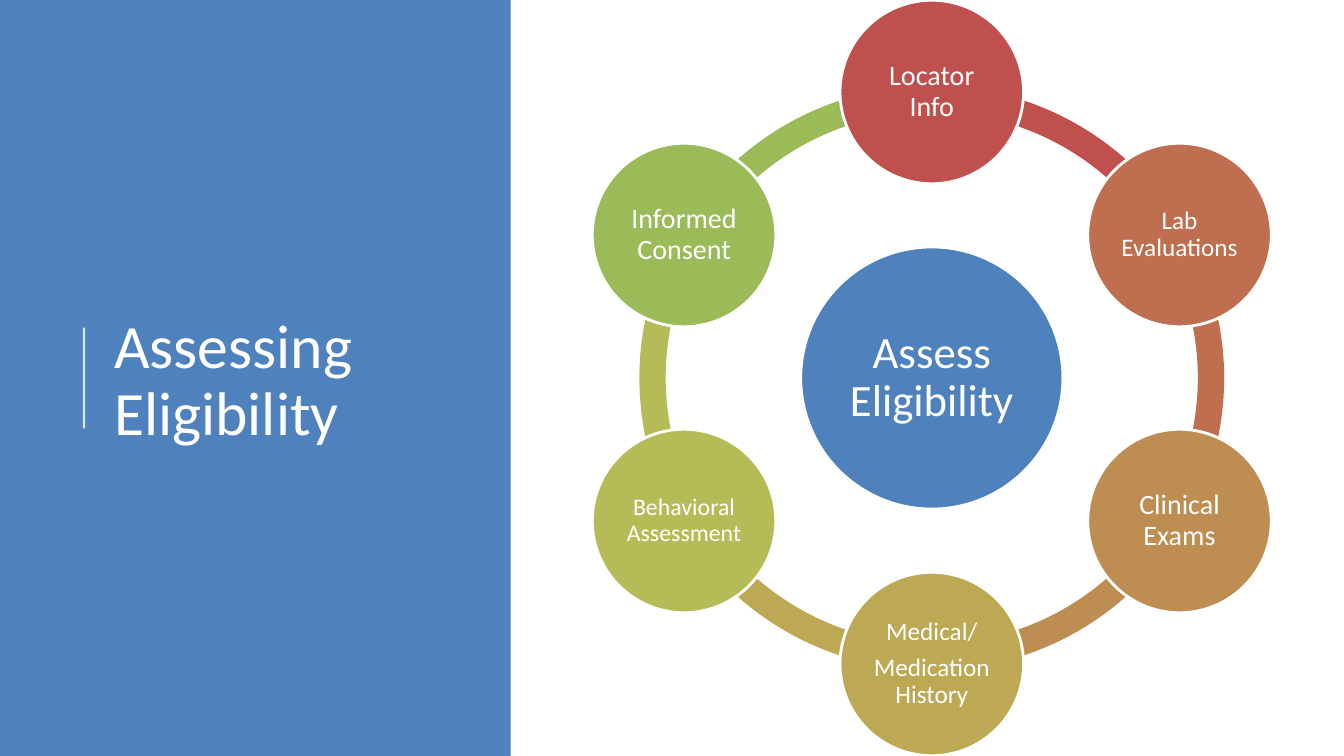
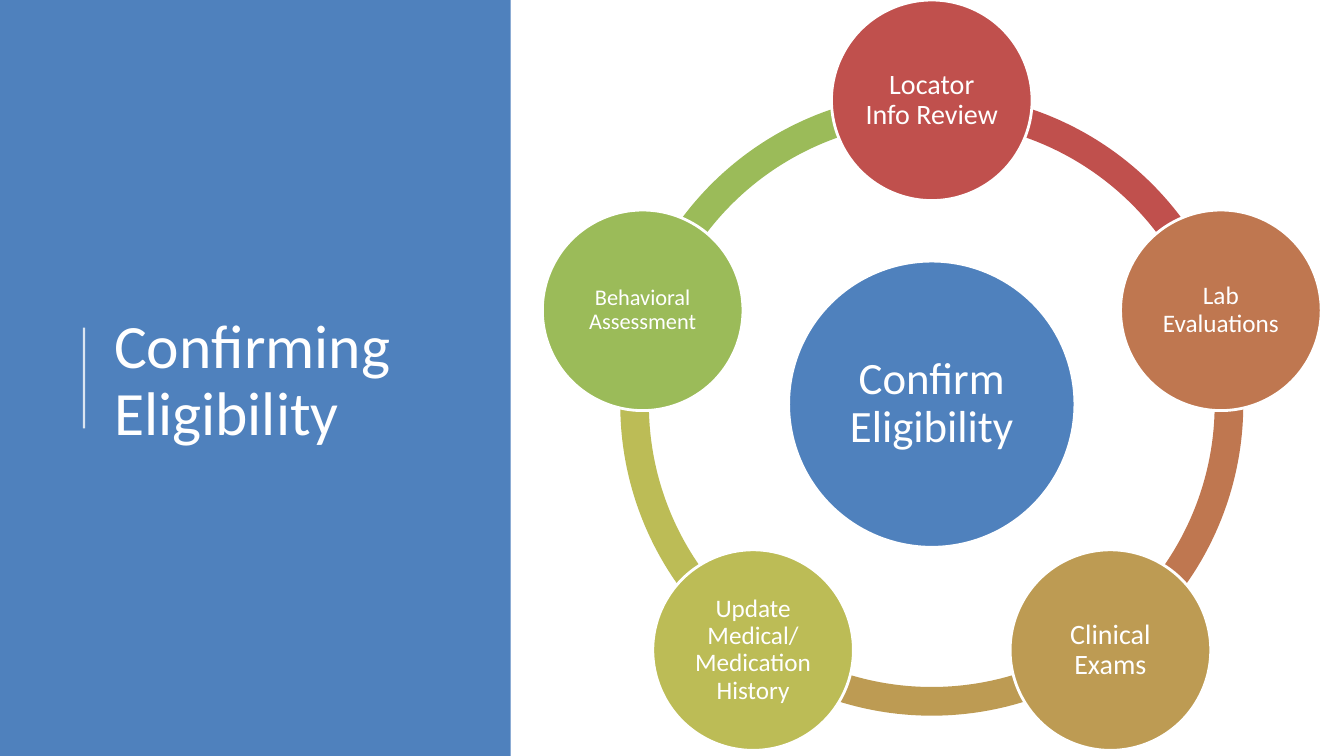
import dataclasses
import math

import lxml.etree
import pptx
import pptx.dml.color
import pptx.enum.shapes
import pptx.enum.text
import pptx.oxml.ns
import pptx.util


@dataclasses.dataclass(frozen=True)
class Theme:
    font: str = "Calibri"
    blue: str = "4F81BD"
    white: str = "FFFFFF"
    title_size: int = 44
    hub_size: int = 32
    large: int = 20
    medium: int = 18
    small: int = 17
    smallest: int = 16
    outline: int = 2
    rule: float = 1.5


theme = Theme()
ShapeType = pptx.enum.shapes.MSO_SHAPE
Align = pptx.enum.text.PP_ALIGN

presentation = pptx.Presentation()
presentation.slide_width = pptx.util.Inches(13.33)
presentation.slide_height = pptx.util.Inches(7.5)
column = presentation.slide_width / 100
row = presentation.slide_height / 100


def write_text(shape, text, *, size, align=Align.CENTER, inset=0.03, gap=0):
    frame = shape.text_frame
    frame.word_wrap = True
    frame.vertical_anchor = pptx.enum.text.MSO_ANCHOR.MIDDLE
    frame.margin_left = frame.margin_right = pptx.util.Inches(inset)
    frame.margin_top = frame.margin_bottom = pptx.util.Inches(inset)
    frame.text = text
    for paragraph in frame.paragraphs:
        paragraph.alignment = align
        paragraph.line_spacing = 0.9
        paragraph.space_after = pptx.util.Pt(gap)
        font = paragraph.runs[0].font
        font.name = theme.font
        font.size = pptx.util.Pt(size)
        font.color.rgb = pptx.dml.color.RGBColor.from_string(theme.white)


def add_filled(slide, kind, box, color, outline=0):
    shape = slide.shapes.add_shape(kind, *[round(length) for length in box])
    shape.shadow.inherit = False
    shape.fill.solid()
    shape.fill.fore_color.rgb = pptx.dml.color.RGBColor.from_string(color)
    if outline:
        shape.line.color.rgb = pptx.dml.color.RGBColor.from_string(theme.white)
        shape.line.width = pptx.util.Pt(outline)
    else:
        shape.line.fill.background()
    return shape


cycles = [
    {
        "title": "Assessing Eligibility",
        "hub": "Assess Eligibility",
        "middle": 50, "orbit": 37.83, "ring": 77.33, "band": 0.045,
        "hub_width": 34.67, "step_width": 24.27, "gap": 6.3,
        "steps": [
            ("Locator Info", theme.large, "C0504D"),
            ("Lab Evaluations", theme.medium, "BF6F4F"),
            ("Clinical Exams", theme.large, "BE8D52"),
            ("Medical/\nMedication History", theme.medium, "BDA954"),
            ("Behavioral Assessment", theme.small, "B5BC57"),
            ("Informed Consent", theme.large, "9BBB59"),
        ],
    },
    {
        "title": "Confirming Eligibility",
        "hub": "Confirm Eligibility",
        "middle": 53.47, "orbit": 40.2, "ring": 82.4, "band": 0.046,
        "hub_width": 37.87, "step_width": 26.53, "gap": 0,
        "steps": [
            ("Locator Info Review", theme.large, "C0504D"),
            ("Lab Evaluations", theme.medium, "BF7750"),
            ("Clinical Exams", theme.large, "BD9B53"),
            ("Update Medical/\nMedication History", theme.medium, "BCBC56"),
            ("Behavioral Assessment", theme.smallest, "9BBB59"),
        ],
    },
]

for cycle in cycles:
    slide = presentation.slides.add_slide(presentation.slide_layouts[6])
    add_filled(slide, ShapeType.RECTANGLE, (0, 0, 38 * column, 100 * row), theme.blue)

    rule = slide.shapes.add_connector(
        pptx.enum.shapes.MSO_CONNECTOR.STRAIGHT,
        round(6.25 * column), round(56.67 * row), round(6.25 * column), round(43.33 * row),
    )
    rule.line.color.rgb = pptx.dml.color.RGBColor.from_string(theme.white)
    rule.line.width = pptx.util.Pt(theme.rule)
    color_element = rule.element.spPr.find(".//" + pptx.oxml.ns.qn("a:srgbClr"))
    lxml.etree.SubElement(color_element, pptx.oxml.ns.qn("a:alpha"), val="80000")
    lxml.etree.SubElement(rule.element.spPr, pptx.oxml.ns.qn("a:effectLst"))

    title = slide.shapes.add_textbox(
        round(7.75 * column), round(10.4 * row), round(27.7 * column), round(80.27 * row)
    )
    write_text(title, cycle["title"], size=theme.title_size, align=Align.LEFT, inset=0.1)

    center_x, center_y = 69.33 * column, cycle["middle"] * row
    turn = 360 / len(cycle["steps"])

    ring = cycle["ring"] * row
    for index, (label, size, color) in enumerate(cycle["steps"]):
        box = (center_x - ring / 2, center_y - ring / 2, ring, ring)
        arc = add_filled(slide, ShapeType.BLOCK_ARC, box, color)
        start = 270 + index * turn
        arc.adjustments[0] = start % 360 * 0.6
        arc.adjustments[1] = (start + turn) % 360 * 0.6
        arc.adjustments[2] = cycle["band"]

    width = cycle["hub_width"] * row
    box = (center_x - width / 2, center_y - width / 2, width, width)
    hub = add_filled(slide, ShapeType.OVAL, box, theme.blue, theme.outline)
    write_text(hub, cycle["hub"], size=theme.hub_size, inset=0.04)

    width = cycle["step_width"] * row
    for index, (label, size, color) in enumerate(cycle["steps"]):
        angle = math.radians(270 + index * turn)
        left = center_x + cycle["orbit"] * row * math.cos(angle) - width / 2
        top = center_y + cycle["orbit"] * row * math.sin(angle) - width / 2
        step = add_filled(slide, ShapeType.OVAL, (left, top, width, width), color, theme.outline)
        write_text(step, label, size=size, gap=cycle["gap"])

presentation.save("out.pptx")
